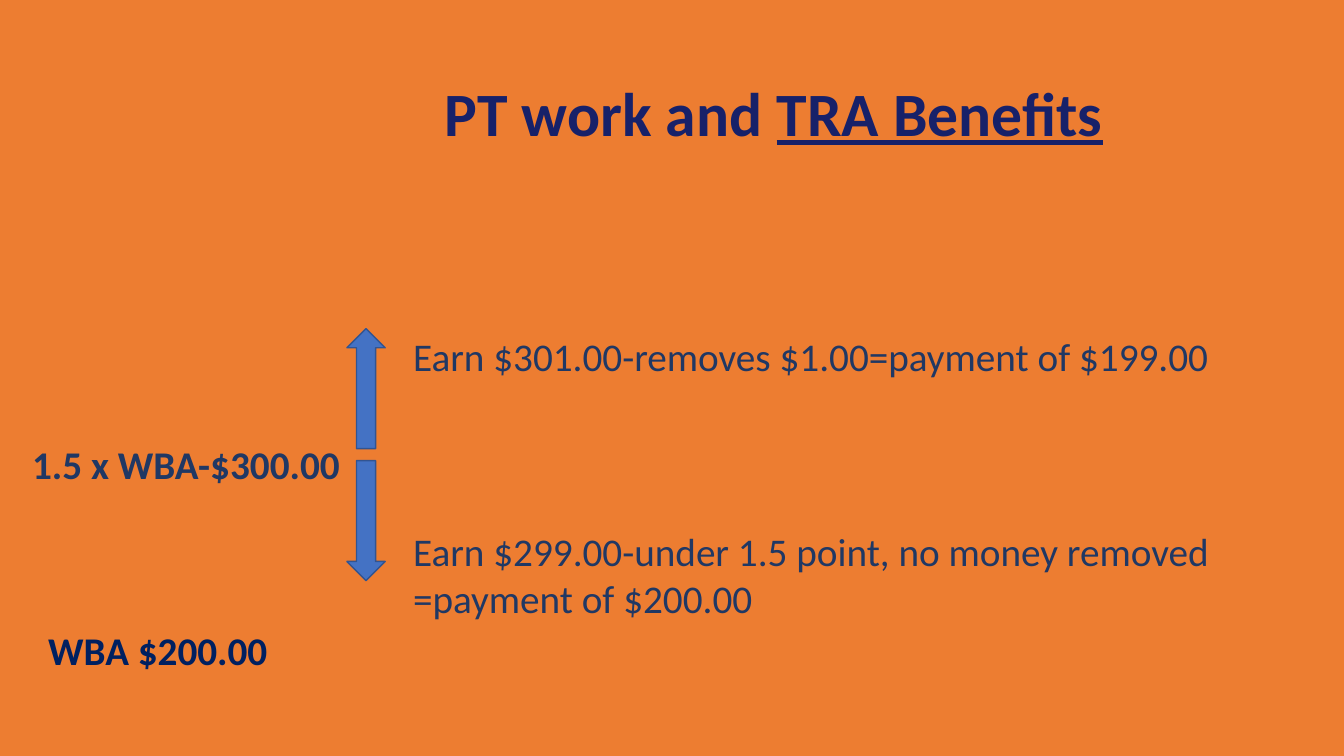
from pptx import Presentation
from pptx.dml.color import RGBColor
from pptx.enum.shapes import MSO_SHAPE
from pptx.enum.text import MSO_ANCHOR, PP_ALIGN
from pptx.util import Inches, Pt

DOWN_ARROW = MSO_SHAPE.DOWN_ARROW
TOP, MIDDLE = MSO_ANCHOR.TOP, MSO_ANCHOR.MIDDLE
LEFT, CENTER = PP_ALIGN.LEFT, PP_ALIGN.CENTER

SLIDE_WIDTH, SLIDE_HEIGHT = Inches(13.33), Inches(7.5)
COLUMNS = ROWS = 100
COLORS = {
    "background": "ED7D31",
    "title": "172169",
    "benefit": "002060",
    "body": "203864",
    "arrow": "4472C4",
    "arrow_edge": "325491",
}
ARROW_COLUMN, ARROW_WIDTH, ARROW_HEIGHT = 25.81, 2.85, 15.87
EXAMPLE_COLUMN = 30


def color(name):
    """Return the named palette colour."""
    return RGBColor.from_string(COLORS[name])


def grid(column, row, width, height):
    """Turn grid columns and rows into slide lengths."""
    return (
        int(SLIDE_WIDTH * column / COLUMNS),
        int(SLIDE_HEIGHT * row / ROWS),
        int(SLIDE_WIDTH * width / COLUMNS),
        int(SLIDE_HEIGHT * height / ROWS),
    )


def add_text(slide, cell, text, underlined="", size=28, tint="body", bold=False,
             align=LEFT, anchor=TOP, spacing=1.0):
    """Write a paragraph in a grid cell, with an optional underlined ending."""
    frame = slide.shapes.add_textbox(*grid(*cell)).text_frame
    frame.word_wrap = True
    frame.vertical_anchor = anchor
    paragraph = frame.paragraphs[0]
    paragraph.alignment = align
    paragraph.line_spacing = spacing
    for words, underline in ((text, None), (underlined, True)):
        if words:
            run = paragraph.add_run()
            run.text = words
            run.font.name = "Calibri"
            run.font.size = Pt(size)
            run.font.bold = bold
            run.font.underline = underline
            run.font.color.rgb = color(tint)


def add_arrow(slide, row, rotation=0):
    """Draw a block arrow in the arrow column."""
    cell = grid(ARROW_COLUMN, row, ARROW_WIDTH, ARROW_HEIGHT)
    arrow = slide.shapes.add_shape(DOWN_ARROW, *cell)
    arrow.rotation = rotation
    arrow.shadow.inherit = False
    arrow.fill.solid()
    arrow.fill.fore_color.rgb = color("arrow")
    arrow.line.color.rgb = color("arrow_edge")
    arrow.line.width = Pt(1)


def main():
    """Build the slide and save it."""
    deck = Presentation()
    deck.slide_width, deck.slide_height = SLIDE_WIDTH, SLIDE_HEIGHT
    slide = deck.slides.add_slide(deck.slide_layouts[6])
    slide.background.fill.solid()
    slide.background.fill.fore_color.rgb = color("background")

    add_text(slide, (26.33, 8.93, 62.49, 12.93), "PT work and ", "TRA Benefits",
             size=44, tint="title", bold=True, align=CENTER, anchor=MIDDLE,
             spacing=0.9)
    add_text(slide, (2.85, 82.93, 20.1, 9.07), "WBA $200.00",
             tint="benefit", bold=True, spacing=0.9)
    add_text(slide, (1.65, 57.6, 24.68, 7.6), "1.5 x WBA-$300.00", bold=True)

    add_arrow(slide, 60.93)
    add_arrow(slide, 43.47, rotation=180)

    add_text(slide, (EXAMPLE_COLUMN, 43.33, 62.49, 7.6),
             "Earn $301.00-removes $1.00=payment of $199.00")
    add_text(slide, (EXAMPLE_COLUMN, 69.07, 63.32, 13.87),
             "Earn $299.00-under 1.5 point, no money removed =payment of $200.00")

    deck.save("out.pptx")


if __name__ == "__main__":
    main()
